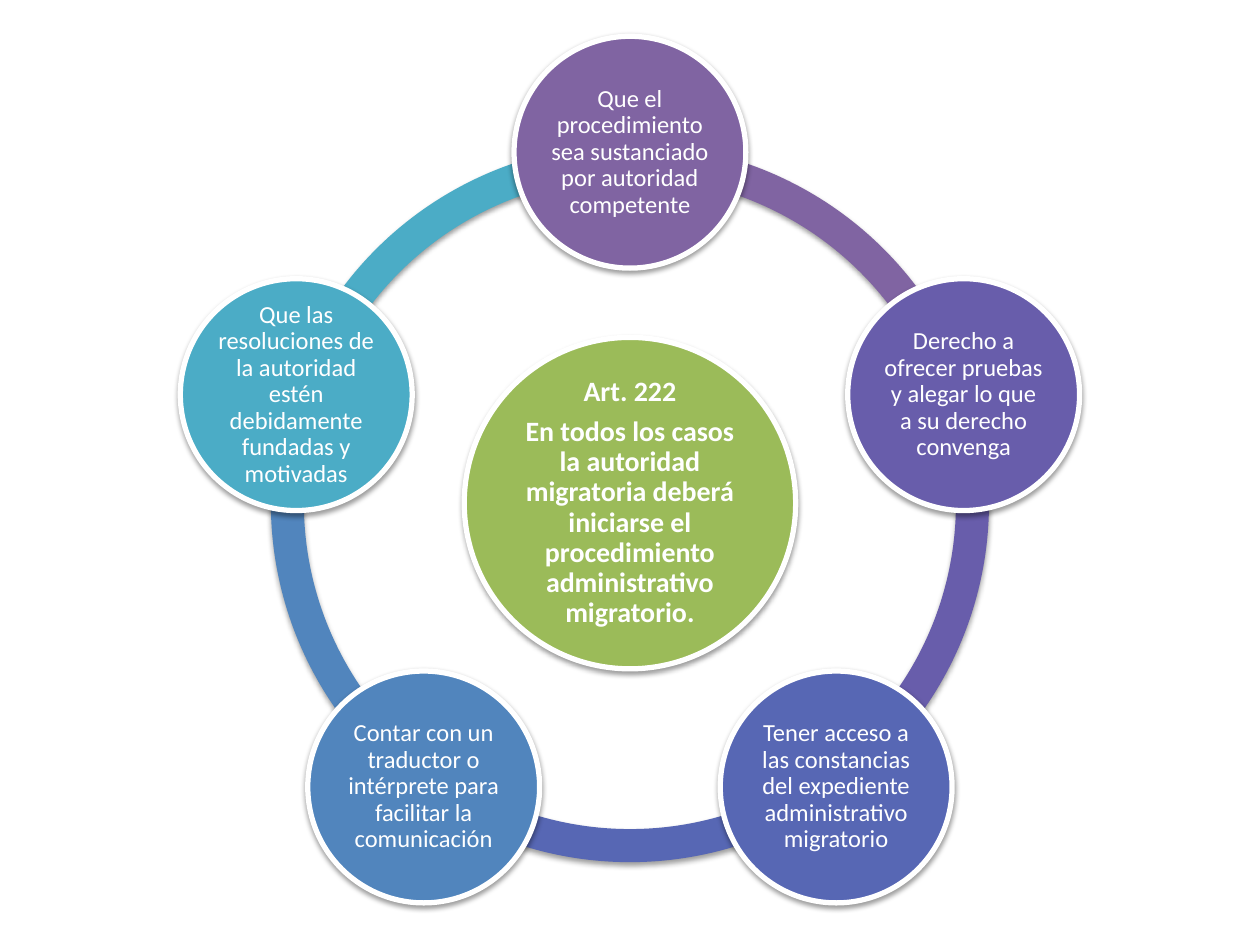
import math
from dataclasses import dataclass

import pptx
import pptx.dml.color
import pptx.enum.shapes
import pptx.enum.text
import pptx.oxml
import pptx.oxml.ns
import pptx.util

Pt = pptx.util.Pt
SHAPE = pptx.enum.shapes.MSO_SHAPE


@dataclass(frozen=True)
class Theme:
    font: str = "Calibri"
    white: str = "FFFFFF"
    hub: str = "9BBB59"
    nodes: tuple = ("8064A2", "685DAB", "5767B4", "5185BD", "4BACC6")
    hub_size: int = 16
    node_size: int = 14
    outline: int = 3


THEME = Theme()

# Geometry in points
CENTER_X, CENTER_Y = 360, 287.5
RING_DIAMETER = 410.4
RING_THICKNESS = 0.046
ORBIT_RADIUS = 200.5
HUB_DIAMETER = 189.4
NODE_DIAMETER = 132.5
INSET = 1.44

HUB_TEXT = [
    "Art. 222",
    "En todos los casos la autoridad migratoria deberá iniciarse el "
    "procedimiento administrativo migratorio.",
]
RIGHTS = [
    "Que el procedimiento sea sustanciado por autoridad competente",
    "Derecho a ofrecer pruebas y alegar lo que a su derecho convenga",
    "Tener acceso a las constancias del expediente administrativo migratorio",
    "Contar con un traductor o intérprete para facilitar la comunicación",
    "Que las resoluciones de la autoridad estén debidamente fundadas y motivadas",
]
STEP = 360 / len(RIGHTS)

SHADOW = (
    f'<a:outerShdw {pptx.oxml.ns.nsdecls("a")} blurRad="{Pt(3.1)}" dist="{Pt(1.6)}" '
    'dir="5400000" rotWithShape="0"><a:srgbClr val="000000">'
    '<a:alpha val="38000"/></a:srgbClr></a:outerShdw>'
)


def rgb(value):
    return pptx.dml.color.RGBColor.from_string(value)


def apply_format(target, values):
    for name, value in values.items():
        setattr(target, name, value)


def node_angle(index):
    """Clockwise angle in degrees, starting at the top."""
    return (270 + index * STEP) % 360


def add_round_shape(page, kind, x, y, diameter, color):
    """Add a filled shape with a soft shadow, centred on x, y."""
    shape = page.shapes.add_shape(
        kind, Pt(x - diameter / 2), Pt(y - diameter / 2), Pt(diameter), Pt(diameter))
    shape.fill.solid()
    shape.fill.fore_color.rgb = rgb(color)
    shape.line.fill.background()
    shape.shadow.inherit = False
    effects = shape._element.spPr.find(pptx.oxml.ns.qn("a:effectLst"))
    effects.append(pptx.oxml.parse_xml(SHADOW))
    return shape


def add_arc(page, index):
    """Add the ring segment that runs from one node to the next."""
    arc = add_round_shape(page, SHAPE.BLOCK_ARC, CENTER_X, CENTER_Y,
                          RING_DIAMETER, THEME.nodes[index])
    # Angles are stored in 60000ths of a degree, adjustments in 100000ths
    arc.adjustments[0] = node_angle(index) * 0.6
    arc.adjustments[1] = node_angle(index + 1) * 0.6
    arc.adjustments[2] = RING_THICKNESS


def add_circle(page, x, y, diameter, color, texts, size, bold=False):
    """Add an outlined circle with centred text."""
    circle = add_round_shape(page, SHAPE.OVAL, x, y, diameter, color)
    circle.line.color.rgb = rgb(THEME.white)
    circle.line.width = Pt(THEME.outline)
    frame = circle.text_frame
    apply_format(frame, {
        "word_wrap": True,
        "vertical_anchor": pptx.enum.text.MSO_ANCHOR.MIDDLE,
        "margin_left": Pt(INSET), "margin_right": Pt(INSET),
        "margin_top": Pt(INSET), "margin_bottom": Pt(INSET),
    })
    for number, text in enumerate(texts):
        para = frame.add_paragraph() if number else frame.paragraphs[0]
        apply_format(para, {
            "alignment": pptx.enum.text.PP_ALIGN.CENTER,
            "line_spacing": 0.9,
            "space_after": Pt(size * 0.35),
        })
        span = para.add_run()
        span.text = text
        apply_format(span.font, {"name": THEME.font, "size": Pt(size), "bold": bold})
        span.font.color.rgb = rgb(THEME.white)


def main():
    deck = pptx.Presentation()
    apply_format(deck, {"slide_width": Pt(720), "slide_height": Pt(540)})
    page = deck.slides.add_slide(deck.slide_layouts[6])

    # Ring behind the circles
    for index in reversed(range(len(RIGHTS))):
        add_arc(page, index)

    # Central article
    add_circle(page, CENTER_X, CENTER_Y, HUB_DIAMETER, THEME.hub,
               HUB_TEXT, THEME.hub_size, bold=True)

    # Rights around the ring
    for index, text in enumerate(RIGHTS):
        angle = math.radians(node_angle(index))
        add_circle(page, CENTER_X + ORBIT_RADIUS * math.cos(angle),
                   CENTER_Y + ORBIT_RADIUS * math.sin(angle),
                   NODE_DIAMETER, THEME.nodes[index], [text], THEME.node_size)

    deck.save("out.pptx")


if __name__ == "__main__":
    main()
